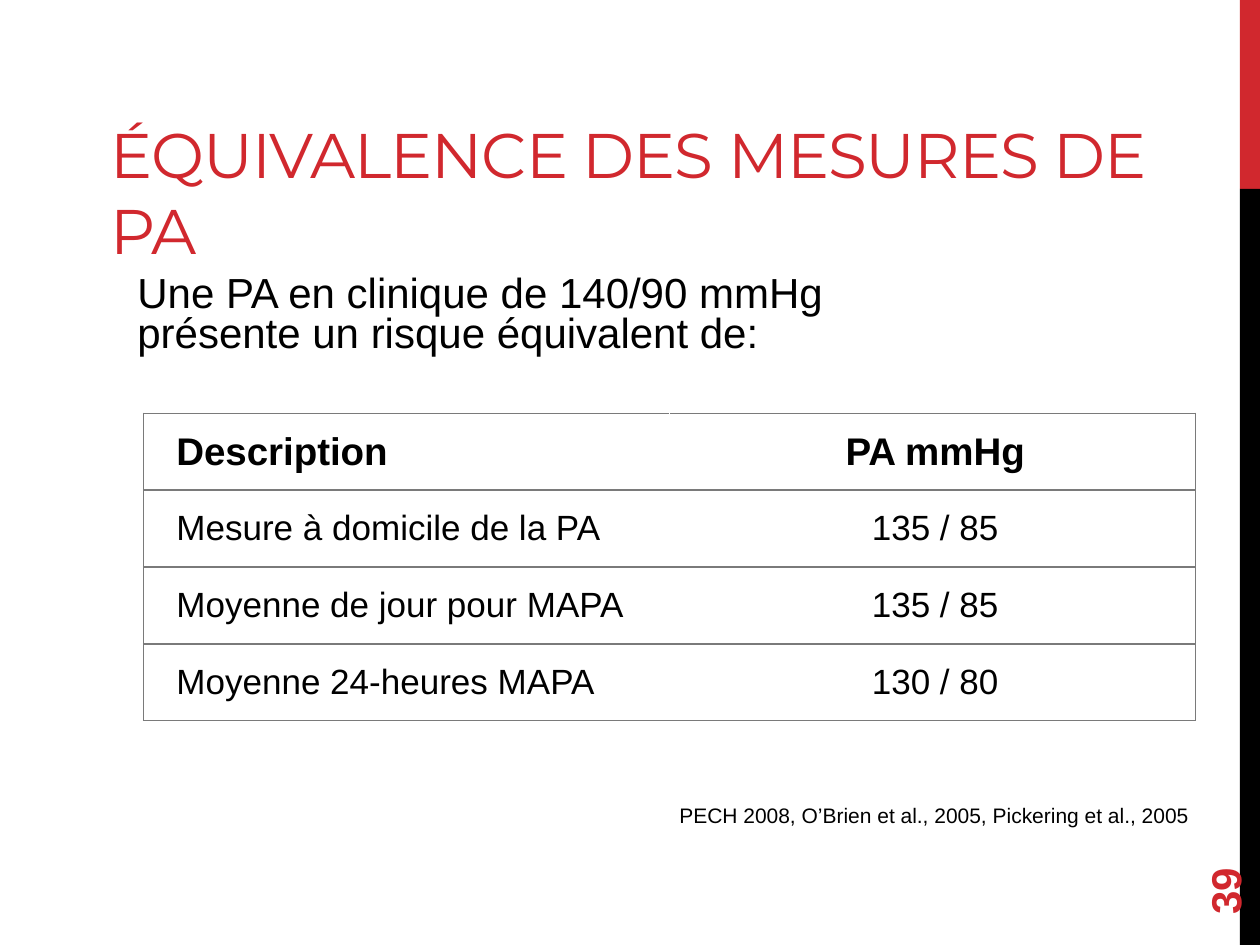
from dataclasses import dataclass
from lxml import etree
from pptx import Presentation, util as u
from pptx.dml.color import RGBColor
from pptx.enum import shapes, text
from pptx.oxml.ns import qn


@dataclass(frozen=True)
class Theme:
    red: RGBColor = RGBColor(0xD1, 0x28, 0x2E)
    black: RGBColor = RGBColor(0, 0, 0)
    border: str = "7A7A7A"
    heading: str = "Montserrat"
    body: str = "Arial"
    title: int = 36
    lead: int = 24
    head: int = 22
    cell: int = 20
    note: int = 12


T = Theme()
W, H = 10, 7.5
LEFT, CENTER, RIGHT = text.PP_ALIGN.LEFT, text.PP_ALIGN.CENTER, text.PP_ALIGN.RIGHT
MIDDLE = text.MSO_ANCHOR.MIDDLE

ROWS = [
    ("Description", "PA mmHg"),
    ("Mesure à domicile de la PA", "135 / 85"),
    ("Moyenne de jour pour MAPA", "135 / 85"),
    ("Moyenne 24-heures MAPA", "130 / 80"),
]


def inches(box):
    return [u.Inches(v) for v in box]


def style(p, size, color=T.black, font=T.body, bold=False, align=LEFT):
    p.alignment = align
    p.font.size, p.font.name, p.font.bold = u.Pt(size), font, bold
    p.font.color.rgb = color


def add_text(s, box, words, size, insets=(0.1, 0.05, 0.1, 0.05),
             anchor=text.MSO_ANCHOR.TOP, **look):
    sp = s.shapes.add_textbox(*inches(box))
    tf = sp.text_frame
    tf.word_wrap = True
    tf.vertical_anchor = anchor
    tf.margin_left, tf.margin_top, tf.margin_right, tf.margin_bottom = inches(insets)
    p = tf.paragraphs[0]
    p.text = words
    style(p, size, **look)
    return sp, p


def side_band(s, box, red_share=0.2):
    x, y, w, h = box
    split = h * red_share
    for top, height, color in ((y, split, T.red), (y + split, h - split, T.black)):
        sp = s.shapes.add_shape(shapes.MSO_SHAPE.RECTANGLE, *inches((x, top, w, height)))
        sp.shadow.inherit = False
        sp.fill.solid()
        sp.fill.fore_color.rgb = color
        sp.line.fill.background()


def title(s, box):
    _, p = add_text(s, box, "ÉQUIVALENCE DES MESURES DE PA", T.title,
                    insets=(0.1, 0.05, 0.14, 0.05), anchor=text.MSO_ANCHOR.BOTTOM,
                    color=T.red, font=T.heading)
    p.runs[0].font._element.set("spc", "-60")  # tighter letters


def page_number(s, box):
    sp, _ = add_text(s, box, "39", T.lead, anchor=MIDDLE, color=T.red, bold=True)
    sp.rotation = 270


def lead(s, box):
    _, p = add_text(s, box,
                    "Une PA en clinique de 140/90 mmHg présente un risque équivalent de:",
                    T.lead, insets=(0.04, 0, 0.04, 0))
    p.line_spacing = 0.8
    p.space_before = u.Pt(14)


def sources(s, box):
    add_text(s, box, "PECH 2008, O’Brien et al., 2005, Pickering et al., 2005",
             T.note, insets=(0.04, 0, 0.04, 0), align=RIGHT)


def set_borders(cell, sides):
    tcPr = cell._tc.get_or_add_tcPr()
    for side in sides:
        ln = etree.SubElement(tcPr, qn(f"a:ln{side}"), w=str(u.Pt(1)))
        fill = etree.SubElement(ln, qn("a:solidFill"))
        etree.SubElement(fill, qn("a:srgbClr"), val=T.border)


def measures_table(s, box):
    tbl = s.shapes.add_table(len(ROWS), len(ROWS[0]), *inches(box)).table
    tbl.first_row = tbl.horz_banding = False
    # Outer frame and row rules only; no rule between the columns
    columns = ((LEFT, "LTB", 0.26), (CENTER, "RTB", 0.1))
    for i, row in enumerate(ROWS):
        for j, (words, (align, sides, indent)) in enumerate(zip(row, columns)):
            cell = tbl.cell(i, j)
            cell.vertical_anchor = MIDDLE
            cell.margin_left = u.Inches(indent)
            cell.margin_top = cell.margin_right = cell.margin_bottom = u.Inches(0.06)
            set_borders(cell, sides)
            cell.fill.background()
            p = cell.text_frame.paragraphs[0]
            p.text = words
            style(p, T.cell if i else T.head, bold=i == 0, align=align)


def main():
    prs = Presentation()
    prs.slide_width, prs.slide_height = u.Inches(W), u.Inches(H)
    s = prs.slides.add_slide(prs.slide_layouts[6])
    side_band(s, (W - 0.16, 0, 0.16, H))
    title(s, (0.78, 0.07, 9.08, 2.1))
    page_number(s, (9, 6.44, 1.44, 0.4))
    lead(s, (1.05, 2.19, 6.81, 0.81))
    sources(s, (3.51, 6.37, 5.97, 0.31))
    measures_table(s, (1.14, 3.28, 8.35, 2.44))
    prs.save("out.pptx")


if __name__ == "__main__":
    main()
